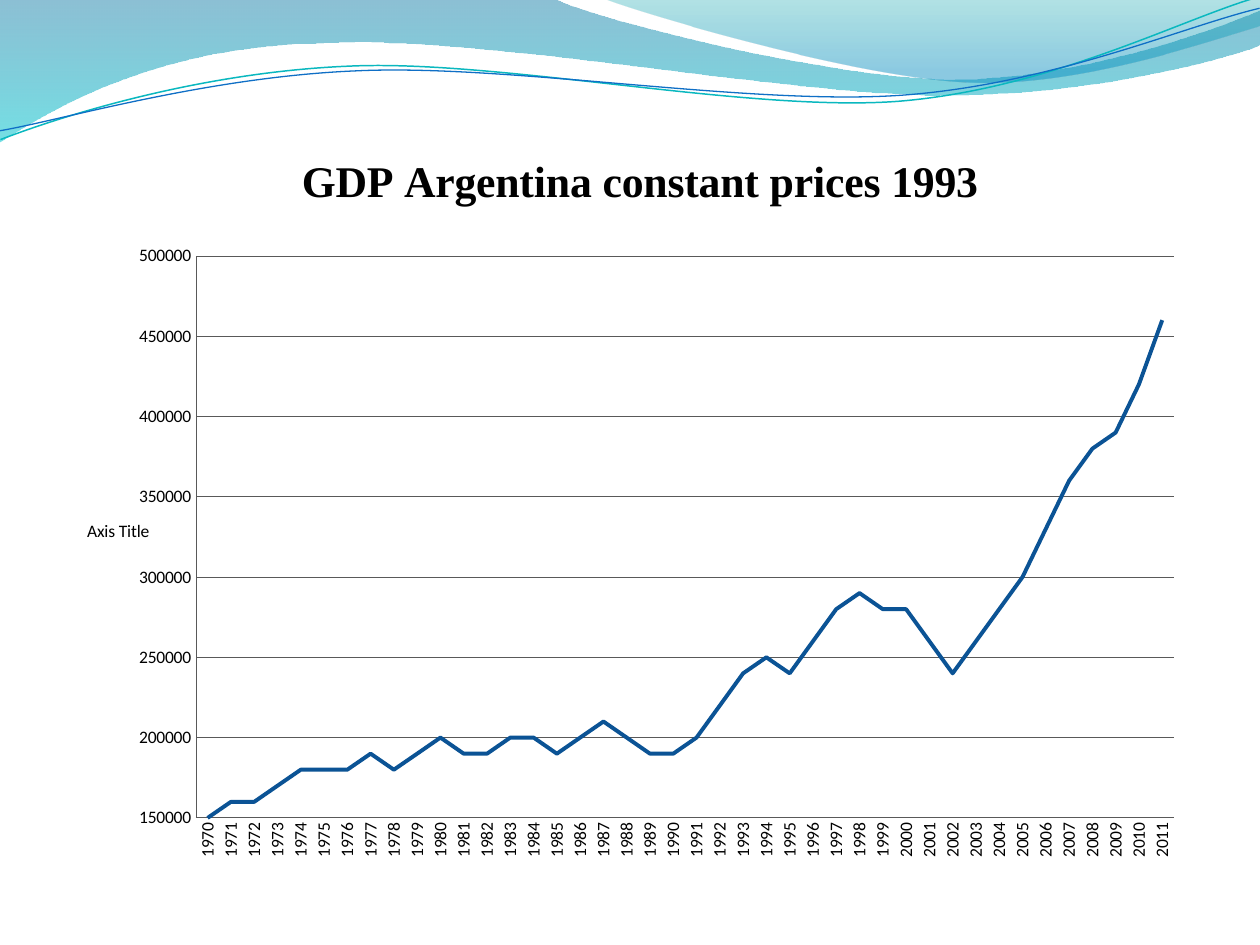
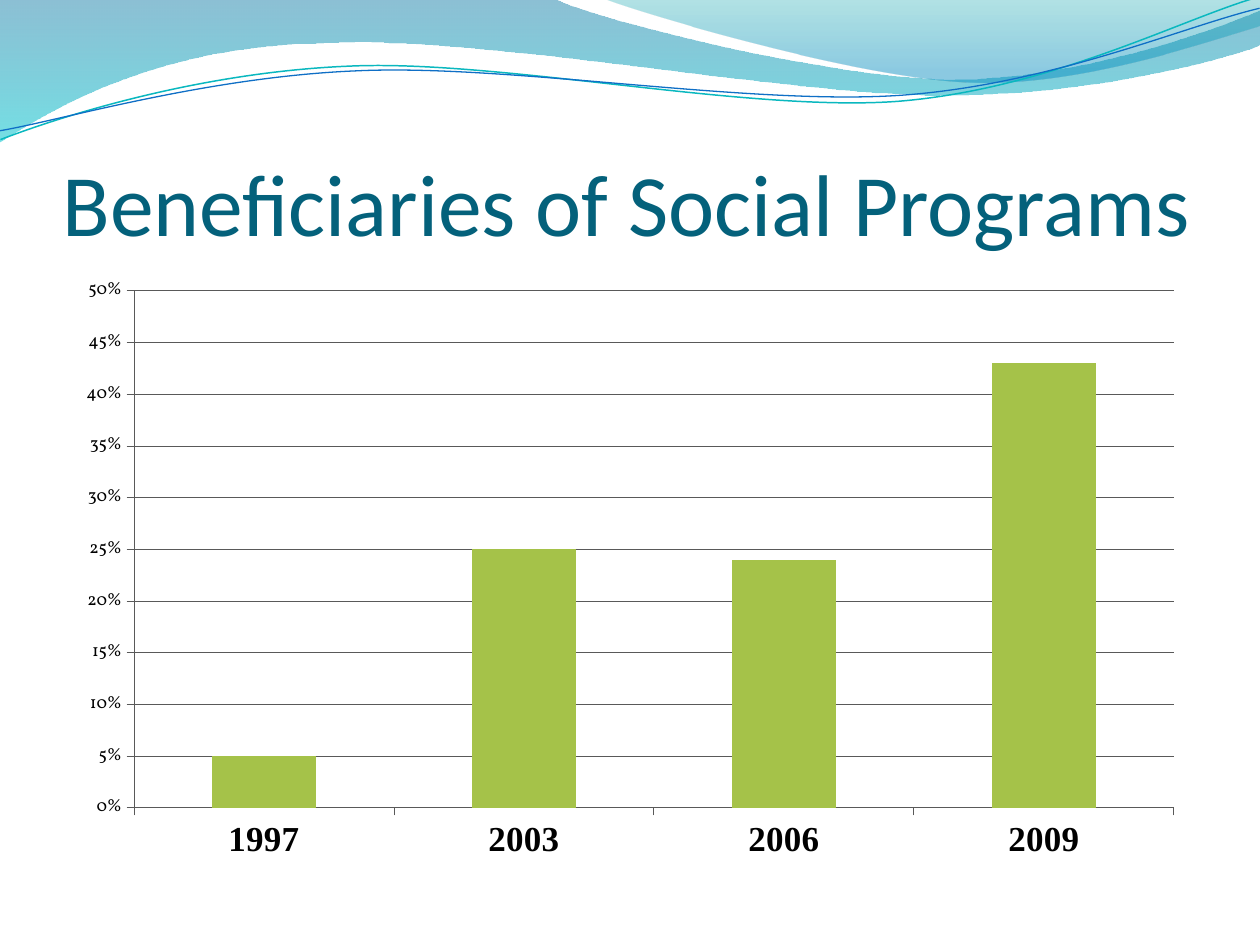
from pptx import Presentation
from pptx import util as u
from pptx.chart import data
from pptx.dml.color import RGBColor
from pptx.enum import chart as charts, text
from pptx.oxml import ns
from lxml import etree

SCALE = u.Inches(1) / 126
SLIDE_SIZE = (1260, 945)
BLACK, GRID, TITLE, LINE, BAR = "000000", "595959", "04617B", "0B5395", "A5C249"
TEAL, BLUE = "0AB8BF", "0F6FC6"
BODY, SERIF, OLD_STYLE = "Calibri", "Times New Roman", "Vollkorn"

WAVE = [(0, 0), (554, -1), (600, 21, 837, 79, 955, 79), (1075, 79, 1207, 33, 1260, 11),
        (1261, 45), (1239, 55, 1096, 96, 940, 95), (784, 95, 481, 35, 324, 43),
        (163, 45, 58, 105, -1, 142)]
CREST = [(604, -1), (641, 14, 859, 78, 969, 82), (1079, 87, 1211, 40, 1260, 26), (1260, 0)]
TEAL_RIBBON = [(-2, 110), (58, 90, 199, 52, 350, 53), (499, 53, 745, 118, 896, 114),
               (1049, 109, 1184, 45, 1260, 27)]
BLUE_RIBBON = [(-2, 101), (57, 94, 207, 57, 357, 58), (509, 58, 750, 112, 902, 108),
               (1052, 104, 1187, 52, 1262, 38)]
RIBBON_TILT = -2.7

FIRST_YEAR = 1970
GDP_TEN_THOUSANDS = [
    15, 16, 16, 17, 18, 18, 18, 19, 18, 19, 20, 19, 19, 20,
    20, 19, 20, 21, 20, 19, 19, 20, 22, 24, 25, 24, 26, 28,
    29, 28, 28, 26, 24, 26, 28, 30, 33, 36, 38, 39, 42, 46]
BENEFICIARIES = {1997: 0.05, 2003: 0.25, 2006: 0.24, 2009: 0.43}


def px(length):
    return u.Emu(round(length * SCALE))


def rgb(color):
    return RGBColor.from_string(color)


def format_font(font, size=10, name=BODY, color=BLACK, bold=False):
    font.size, font.name, font.bold = u.Pt(size), name, bold
    font.color.rgb = rgb(color)


def write(frame, words, align=None, **style):
    paragraph = frame.paragraphs[0]
    paragraph.alignment = align
    run = paragraph.add_run()
    run.text = words
    format_font(run.font, **style)


def bend(shape, segments):
    lines = iter(shape._element.xpath(".//a:path/a:lnTo"))
    for segment in segments:
        corners = [next(lines) for _ in range(len(segment) // 2)]
        if len(corners) == 3:
            curve = etree.Element(ns.qn("a:cubicBezTo"))
            corners[0].addprevious(curve)
            for corner in corners:
                curve.append(corner[0])
                corner.getparent().remove(corner)


def place_in_chart(element, box, left, top, width=None, height=None):
    layout = element.find(ns.qn("c:layout"))
    if layout is None:
        layout = etree.Element(ns.qn("c:layout"))
        element.insert(0, layout)
    manual = etree.SubElement(layout, ns.qn("c:manualLayout"))
    settings = [("xMode", "edge"), ("yMode", "edge"),
                ("x", (left - box[0]) / box[2]), ("y", (top - box[1]) / box[3])]
    if width:
        settings.insert(0, ("layoutTarget", "inner"))
        settings += [("w", width / box[2]), ("h", height / box[3])]
    for tag, value in settings:
        etree.SubElement(manual, ns.qn("c:" + tag)).set("val", str(value))


class Deck:
    """Builds slides that share the wave header and one chart style."""

    def __init__(self):
        self.presentation = Presentation()
        self.presentation.slide_width, self.presentation.slide_height = map(px, SLIDE_SIZE)
        self.slide = None

    def add_slide(self):
        self.slide = self.presentation.slides.add_slide(self.presentation.slide_layouts[6])
        self.band(WAVE, (0, "0074A1", 45), (1, "00C6CF", 55))
        self.band(CREST, (0, "00A1A9", 30), (0.8, "008BBF", 45))
        self.ribbon(TEAL_RIBBON, TEAL, 0.85)
        self.ribbon(BLUE_RIBBON, BLUE, 0.75)

    def outline(self, outline, close):
        start, *segments = outline
        points = [(px(segment[i]), px(segment[i + 1]))
                  for segment in segments for i in range(0, len(segment), 2)]
        builder = self.slide.shapes.build_freeform(px(start[0]), px(start[1]))
        builder.add_line_segments(points, close=close)
        shape = builder.convert_to_shape()
        shape.shadow.inherit = False
        bend(shape, segments)
        return shape

    def band(self, outline, *stops):
        shape = self.outline(outline, True)
        shape.line.fill.background()
        shape.fill.gradient()
        shape.fill.gradient_angle = 270
        for stop, (position, color, _) in zip(shape.fill.gradient_stops, stops):
            stop.position, stop.color.rgb = position, rgb(color)
        colors = shape._element.xpath(".//a:gs/a:srgbClr")
        for element, (_, _, opacity) in zip(colors, stops):
            etree.SubElement(element, ns.qn("a:alpha")).set("val", str(opacity * 1000))

    def ribbon(self, outline, color, width):
        shape = self.outline(outline, False)
        shape.rotation = RIBBON_TILT
        shape.fill.background()
        shape.line.color.rgb, shape.line.width = rgb(color), u.Pt(width)

    def title(self, words, left, top, width, height):
        frame = self.slide.shapes.add_textbox(*map(px, (left, top, width, height))).text_frame
        frame.word_wrap = True
        frame.vertical_anchor = text.MSO_ANCHOR.BOTTOM
        frame.margin_left = frame.margin_right = frame.margin_bottom = 0
        frame.margin_top = px(6)
        write(frame, words, text.PP_ALIGN.LEFT, size=50, color=TITLE)

    def chart(self, kind, values, box, plot_box, font=BODY):
        chart_data = data.CategoryChartData()
        chart_data.categories = list(values)
        chart_data.add_series("Series 1", list(values.values()))
        chart = self.slide.shapes.add_chart(kind, *map(px, box), chart_data).chart
        chart.has_legend = chart.has_title = False
        format_font(chart.font, name=font)
        chart.plots[0].vary_by_categories = False
        place_in_chart(chart._chartSpace.xpath("c:chart/c:plotArea")[0], box, *plot_box)
        return chart

    def axis(self, axis, tick, limits=None, number_format="General", **style):
        axis.major_tick_mark, axis.minor_tick_mark = tick, charts.XL_TICK_MARK.NONE
        axis.has_major_gridlines = limits is not None
        lines = [axis.format.line]
        if limits:
            axis.minimum_scale, axis.maximum_scale, axis.major_unit = limits
            lines.append(axis.major_gridlines.format.line)
        for line in lines:
            line.color.rgb, line.width = rgb(GRID), u.Pt(0.5)
        format_font(axis.tick_labels.font, **style)
        axis.tick_labels.number_format = number_format
        axis.tick_labels.number_format_is_linked = False


def add_gdp_slide(deck):
    deck.add_slide()
    box = (63, 136, 1134, 735)
    values = {FIRST_YEAR + i: v * 10000 for i, v in enumerate(GDP_TEN_THOUSANDS)}
    chart = deck.chart(charts.XL_CHART_TYPE.LINE, values, box, (196, 256, 978, 562))
    none = charts.XL_TICK_MARK.NONE
    deck.axis(chart.category_axis, none)
    labels = chart.category_axis._element.xpath("c:txPr/a:bodyPr")[0]
    labels.set("rot", "-5400000")
    labels.set("vert", "horz")
    deck.axis(chart.value_axis, none, (150000, 500000, 50000), "0")

    chart.has_title = True
    write(chart.chart_title.text_frame, "GDP Argentina constant prices 1993",
          size=25, name=SERIF, bold=True)
    place_in_chart(chart.chart_title._element, box, 294, 146)
    chart.value_axis.has_title = True
    place_in_chart(chart.value_axis.axis_title._element, box, 84, 516)

    series = chart.plots[0].series[0]
    series.smooth = False
    series.format.line.color.rgb, series.format.line.width = rgb(LINE), u.Pt(2.25)


def add_beneficiaries_slide(deck):
    deck.add_slide()
    deck.title("Beneficiaries of Social Programs", 63, 97, 1134, 157)
    chart = deck.chart(charts.XL_CHART_TYPE.COLUMN_CLUSTERED, BENEFICIARIES,
                       (63, 267, 1134, 605), (134, 291, 1040, 517), OLD_STYLE)
    outside = charts.XL_TICK_MARK.OUTSIDE
    deck.axis(chart.category_axis, outside, size=20, name=SERIF, bold=True)
    deck.axis(chart.value_axis, outside, (0, 0.5, 0.05), "0%", name=OLD_STYLE)
    chart.plots[0].gap_width = 150
    fill = chart.plots[0].series[0].format.fill
    fill.solid()
    fill.fore_color.rgb = rgb(BAR)


def main():
    deck = Deck()
    add_gdp_slide(deck)
    add_beneficiaries_slide(deck)
    deck.presentation.save("out.pptx")


if __name__ == "__main__":
    main()
